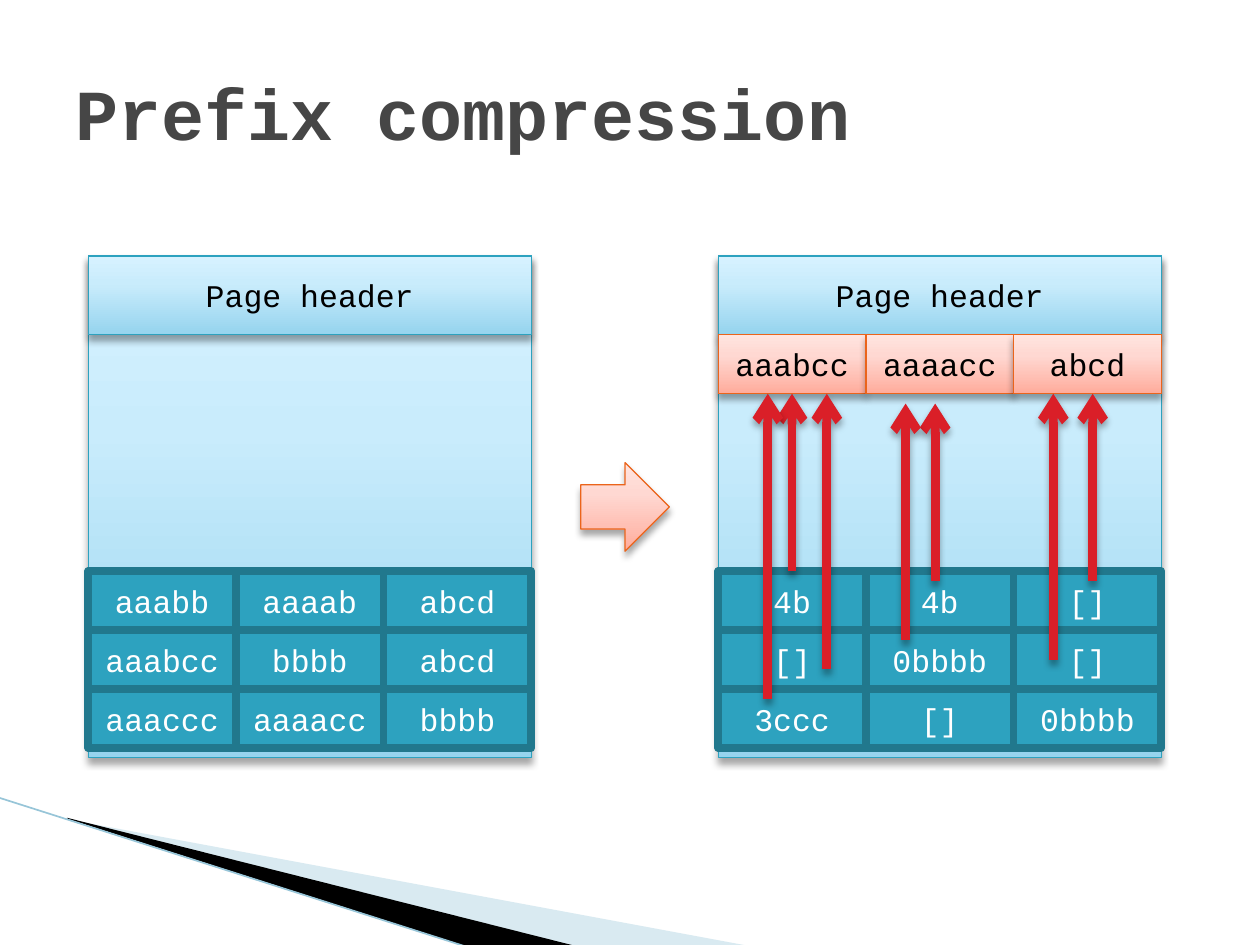
from lxml import etree
from pptx import Presentation
from pptx.dml.color import RGBColor
from pptx.enum.shapes import MSO_CONNECTOR as CONNECTOR, MSO_SHAPE as SHAPE
from pptx.enum.text import MSO_ANCHOR as ANCHOR, PP_ALIGN as ALIGN
from pptx.oxml import parse_xml
from pptx.oxml.ns import nsdecls, qn
from pptx.util import Pt

COLORS = {
    "title": "464646", "black": "000000", "white": "FFFFFF",
    "teal": "2DA2BF", "teal_dark": "21788D", "orange": "EB641B", "red": "DA1F28",
    "wedge": "A0CBDC", "edge": "97C5D8",
}
BLUE_STOPS = ((0, "96D4EE"), (65, "C9ECFC"), (100, "D7F2FF"))
PINK_STOPS = ((0, "FFAC9C"), (65, "FFD8D2"), (100, "FFE4DF"))
FONT = "Courier New"
SHADOW = (
    f'<a:effectLst {nsdecls("a")}><a:outerShdw blurRad="50800" dist="38100" dir="5400000" '
    'rotWithShape="0"><a:srgbClr val="000000"><a:alpha val="35000"/></a:srgbClr>'
    '</a:outerShdw></a:effectLst>'
)


def rgb(name):
    return RGBColor.from_string(COLORS[name])


def add_box(left, top, width, height, line, text="", stops=None, kind=SHAPE.RECTANGLE):
    """Add a shaded box with a shadow if it has gradient stops, else a flat teal cell."""
    shape = slide.shapes.add_shape(kind, Pt(left), Pt(top), Pt(width), Pt(height))
    shape.shadow.inherit = False
    shape.line.color.rgb = rgb(line)
    if stops:
        shape.line.width = Pt(0.75)
        shape.fill.gradient()
        shape.fill.gradient_angle = 90
        stop_list = shape._element.spPr.find(".//" + qn("a:gsLst"))
        stop_list.clear()
        for position, color in stops:
            stop = etree.SubElement(stop_list, qn("a:gs"), pos=str(position * 1000))
            etree.SubElement(stop, qn("a:srgbClr"), val=color)
        properties = shape._element.spPr
        properties.replace(properties.find(qn("a:effectLst")), parse_xml(SHADOW))
    else:
        shape.line.width = Pt(4.33)
        shape.fill.solid()
        shape.fill.fore_color.rgb = rgb("teal")
    if text:
        frame = shape.text_frame
        frame.vertical_anchor = ANCHOR.MIDDLE
        paragraph = frame.paragraphs[0]
        paragraph.alignment = ALIGN.CENTER
        run = paragraph.add_run()
        run.text = text
        run.font.name = FONT
        run.font.size = Pt(18)
        run.font.color.rgb = rgb("black" if stops else "white")
    return shape


presentation = Presentation()
presentation.slide_width, presentation.slide_height = Pt(720), Pt(540)
slide = presentation.slides.add_slide(presentation.slide_layouts[6])

# Corner decoration
WEDGES = (
    ("wedge", 40, ((39.6, 468.4), (428.4, 540.6), (328.3, 540.6), (39.6, 468))),
    ("black", 100, ((38.2, 467.3), (329, 540.6), (267.8, 541.2), (38.9, 468))),
)
for color, opacity, points in WEDGES:
    corners = [(Pt(x), Pt(y)) for x, y in points]
    builder = slide.shapes.build_freeform(*corners[0])
    builder.add_line_segments(corners[1:], close=True)
    wedge = builder.convert_to_shape()
    wedge.shadow.inherit = False
    wedge.line.fill.background()
    wedge.fill.solid()
    wedge.fill.fore_color.rgb = rgb(color)
    if opacity < 100:
        fill_color = wedge._element.spPr.find(qn("a:solidFill"))[0]
        etree.SubElement(fill_color, qn("a:alpha"), val=str(opacity * 1000))

edge = slide.shapes.add_connector(CONNECTOR.STRAIGHT, Pt(-0.7), Pt(455.8), Pt(267.8), Pt(541.4))
edge.line.color.rgb = rgb("edge")
edge.line.width = Pt(0.95)
etree.SubElement(edge._element.spPr, qn("a:effectLst"))

# Title
title = slide.shapes.add_textbox(Pt(36), Pt(28.1), Pt(648), Pt(72))
title.text_frame.word_wrap = True
title.text_frame.vertical_anchor = ANCHOR.MIDDLE
run = title.text_frame.paragraphs[0].add_run()
run.text = "Prefix compression"
run.font.name = FONT
run.font.size = Pt(41)
run.font.bold = True
run.font.color.rgb = rgb("title")

# Pages before and after compression
PAGE_TOP, HEADER_HEIGHT = 146.25, 45
CELL_WIDTH, CELL_HEIGHT = 84.4, 33.75
PAGE_WIDTH = 3 * CELL_WIDTH
PREFIX_TOP = PAGE_TOP + HEADER_HEIGHT
ROWS_TOP = 326.25
LEFT_PAGE, RIGHT_PAGE = 50.4, 410.4
PAGES = {
    LEFT_PAGE: (("aaabb", "aaaab", "abcd"),
                ("aaabcc", "bbbb", "abcd"),
                ("aaaccc", "aaaacc", "bbbb")),
    RIGHT_PAGE: (("4b", "4b", "[]"),
                 ("[]", "0bbbb", "[]"),
                 ("3ccc", "[]", "0bbbb")),
}
cells = {}
for left, rows in PAGES.items():
    add_box(left, PAGE_TOP, PAGE_WIDTH, 286.5, "teal", stops=BLUE_STOPS)
    add_box(left, PAGE_TOP, PAGE_WIDTH, HEADER_HEIGHT, "teal", "Page header", BLUE_STOPS)
    for row, values in enumerate(rows):
        for column, value in enumerate(values):
            cells[left, row, column] = add_box(
                left + column * CELL_WIDTH, ROWS_TOP + row * CELL_HEIGHT,
                CELL_WIDTH, CELL_HEIGHT, "teal_dark", value)

prefixes = [
    add_box(RIGHT_PAGE + column * CELL_WIDTH, PREFIX_TOP, CELL_WIDTH, CELL_HEIGHT,
            "orange", prefix, PINK_STOPS)
    for column, prefix in enumerate(("aaabcc", "aaaacc", "abcd"))
]

# Arrows from the compressed values up to their prefixes: x, start y, end y
ARROWS = (
    (452.6, 326.25, 225), (472.5, 382.5, 225), (438.75, 399.4, 225),
    (534.4, 331.9, 230.6), (517.5, 365.6, 230.6),
    (624.4, 331.9, 225), (601.9, 376.9, 225),
)
for index, (x, start, end) in enumerate(ARROWS):
    arrow = slide.shapes.add_connector(CONNECTOR.STRAIGHT, Pt(x), Pt(start), Pt(x), Pt(end))
    if index == 0:
        arrow.begin_connect(cells[RIGHT_PAGE, 0, 0], 0)
        arrow.end_connect(prefixes[0], 2)
    arrow.line.color.rgb = rgb("red")
    arrow.line.width = Pt(5)
    etree.SubElement(arrow.line._get_or_add_ln(), qn("a:tailEnd"), type="arrow")
    arrow._element.spPr.append(parse_xml(SHADOW))

add_box(331.9, 264.4, 50.6, 50.6, "orange", stops=PINK_STOPS, kind=SHAPE.RIGHT_ARROW)

presentation.save("out.pptx")
